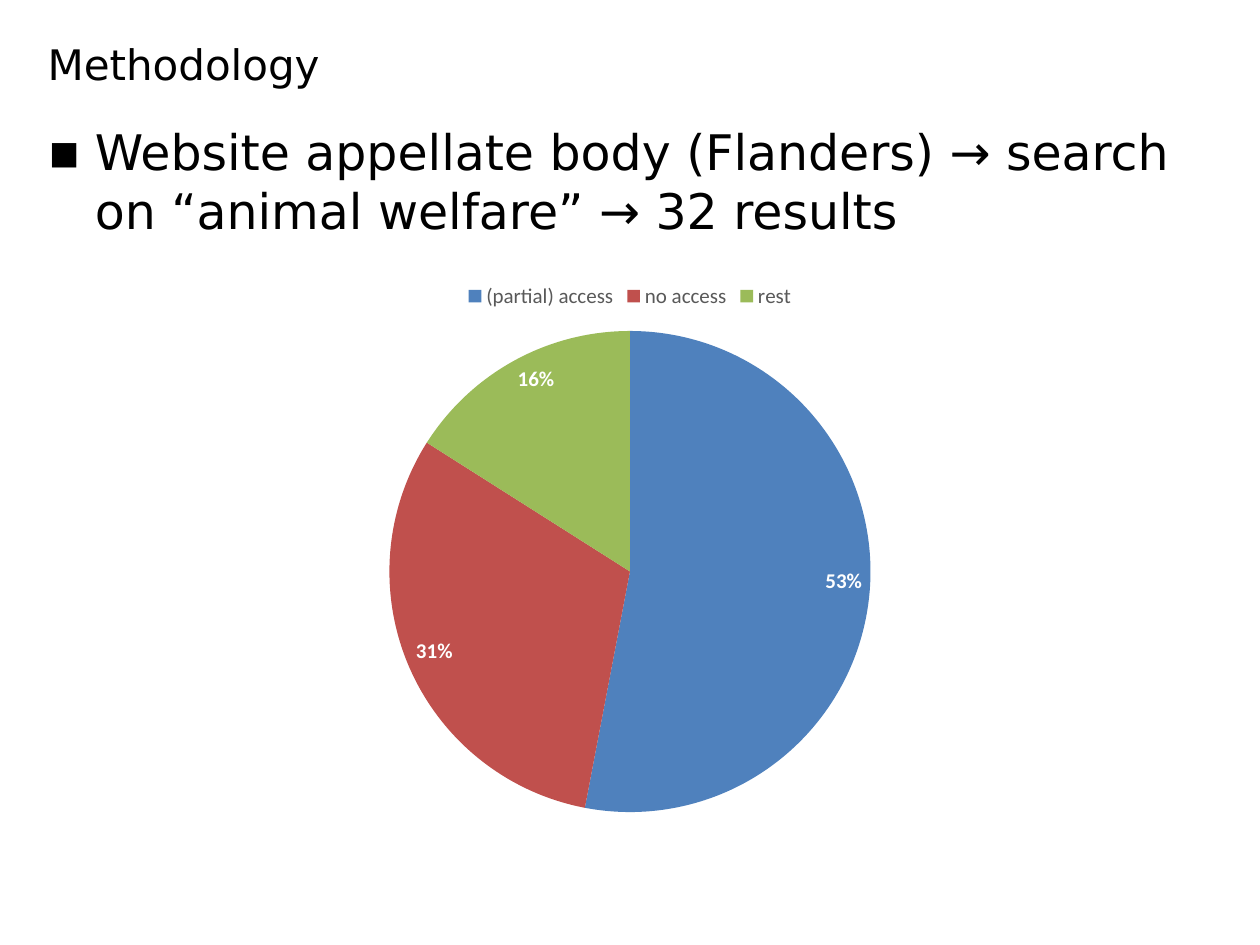
import pptx
import pptx.util
import pptx.chart.data
import pptx.dml.color
import pptx.enum.chart
import pptx.enum.text
import lxml.etree

Pt = pptx.util.Pt
FACE = "DejaVu Sans"

# Content
HEAD = "Methodology"
POINT = "Website appellate body (Flanders) → search on “animal welfare” → 32 results"
SHARES = [
    ("(partial) access", 53, "4F81BD"),
    ("no access", 31, "C0504D"),
    ("rest", 16, "9BBB59"),
]

# Places: left, top, width, height in points
HEAD_BOX = (20, 15, 680, 43)
BODY_BOX = (20, 66, 680, 397)
PIE_BOX = (120, 154, 480, 320)
INDENT = 27


def tint(color, code):
    color.rgb = pptx.dml.color.RGBColor.from_string(code)


def style(font, code, **format):
    for name, value in format.items():
        setattr(font, name, value)
    tint(font.color, code)


def place(shape, box):
    for name, value in zip(("left", "top", "width", "height"), box):
        setattr(shape, name, Pt(value))


def fill(shape, box, text, size, anchor):
    place(shape, box)
    frame = shape.text_frame
    frame.text = text
    frame.word_wrap = True
    frame.auto_size = pptx.enum.text.MSO_AUTO_SIZE.NONE
    frame.vertical_anchor = anchor
    para = frame.paragraphs[0]
    para.alignment = pptx.enum.text.PP_ALIGN.LEFT
    para.space_before = Pt(0)
    style(para.runs[0].font, "000000", name=FACE, size=Pt(size))
    return para


def bullet(para, mark):
    props = para._p.get_or_add_pPr()
    props.set("marL", str(Pt(INDENT)))
    props.set("indent", str(-Pt(INDENT)))
    space = "{http://schemas.openxmlformats.org/drawingml/2006/main}"
    lxml.etree.SubElement(props, space + "buFont", typeface=FACE)
    lxml.etree.SubElement(props, space + "buChar", char=mark)


deck = pptx.Presentation()
deck.slide_width, deck.slide_height = Pt(720), Pt(540)
slide = deck.slides.add_slide(deck.slide_layouts[1])

# Title and list
anchors = pptx.enum.text.MSO_ANCHOR
fill(slide.shapes.title, HEAD_BOX, HEAD, 24, anchors.MIDDLE)
para = fill(slide.placeholders[1], BODY_BOX, POINT, 28, anchors.TOP)
bullet(para, "▪")

# Pie chart
data = pptx.chart.data.CategoryChartData()
data.categories = [name for name, _, _ in SHARES]
data.add_series("Series 1", [value for _, value, _ in SHARES])
kind = pptx.enum.chart.XL_CHART_TYPE.PIE
chart = slide.shapes.add_chart(kind, *map(Pt, PIE_BOX), data).chart
chart.has_title = False
style(chart.font, "000000", name="Calibri", size=Pt(10))

# Legend
chart.has_legend = True
legend = chart.legend
legend.position = pptx.enum.chart.XL_LEGEND_POSITION.TOP
legend.include_in_layout = False
style(legend.font, "595959", name="Calibri", size=Pt(12))

# Slices and their labels
plot = chart.plots[0]
plot.vary_by_categories = True
for index, (_, _, code) in enumerate(SHARES):
    paint = plot.series[0].points[index].format.fill
    paint.solid()
    tint(paint.fore_color, code)
labels = plot.series[0].data_labels
look = {
    "show_percentage": True,
    "show_value": False,
    "number_format": "0%",
    "number_format_is_linked": False,
    "position": pptx.enum.chart.XL_LABEL_POSITION.INSIDE_END,
}
for name, value in look.items():
    setattr(labels, name, value)
style(labels.font, "FFFFFF", name="Calibri", size=Pt(12), bold=True)

deck.save("out.pptx")
